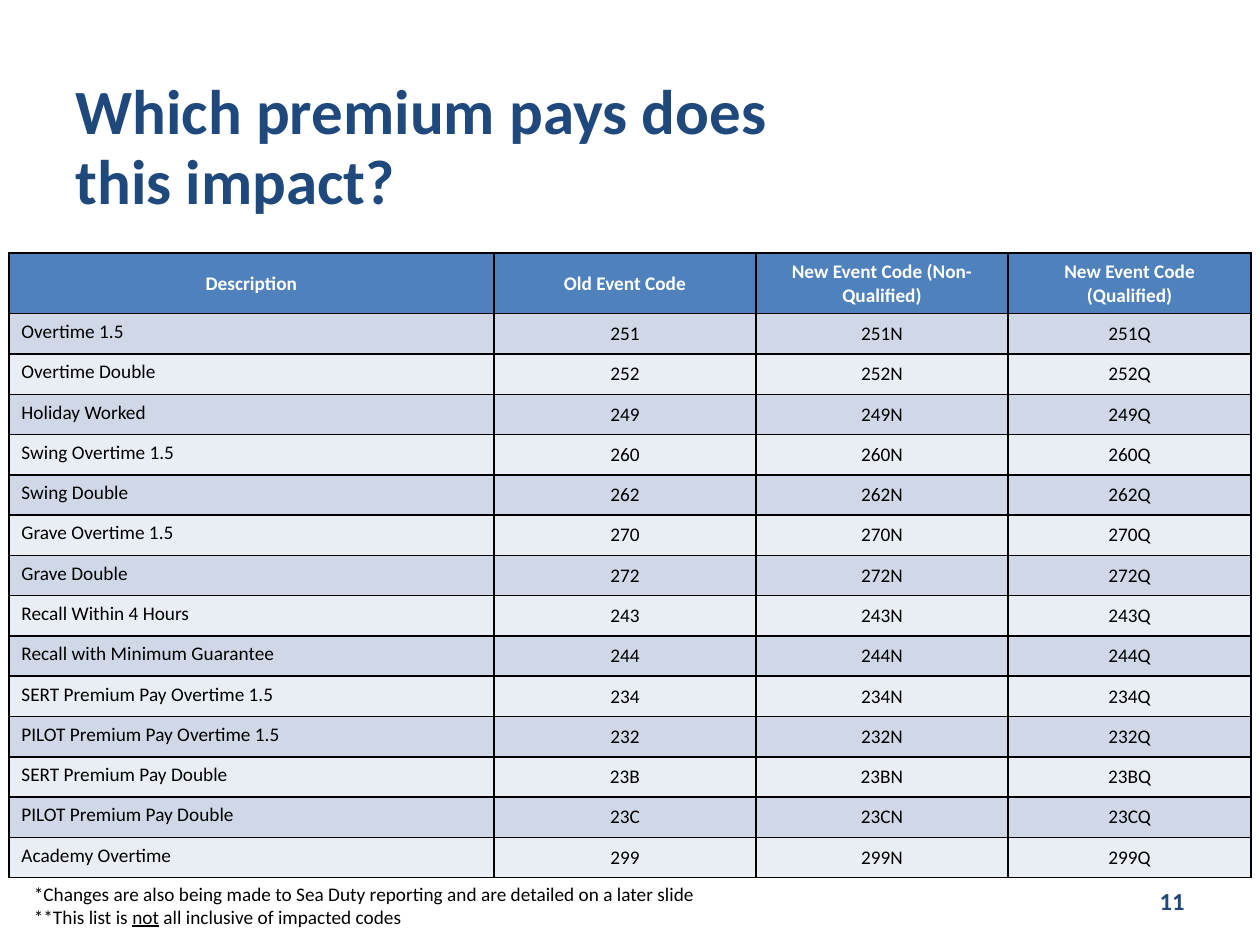
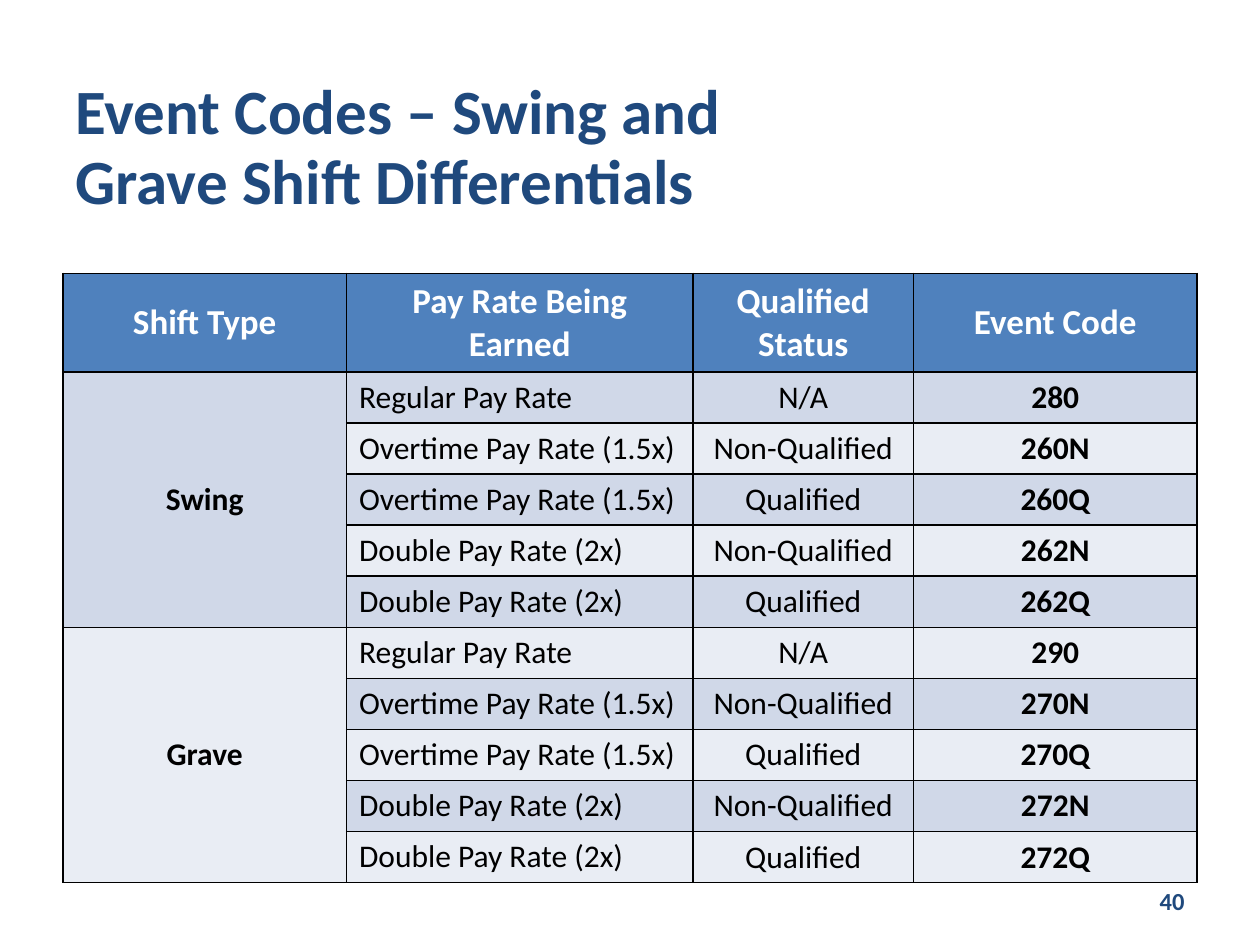
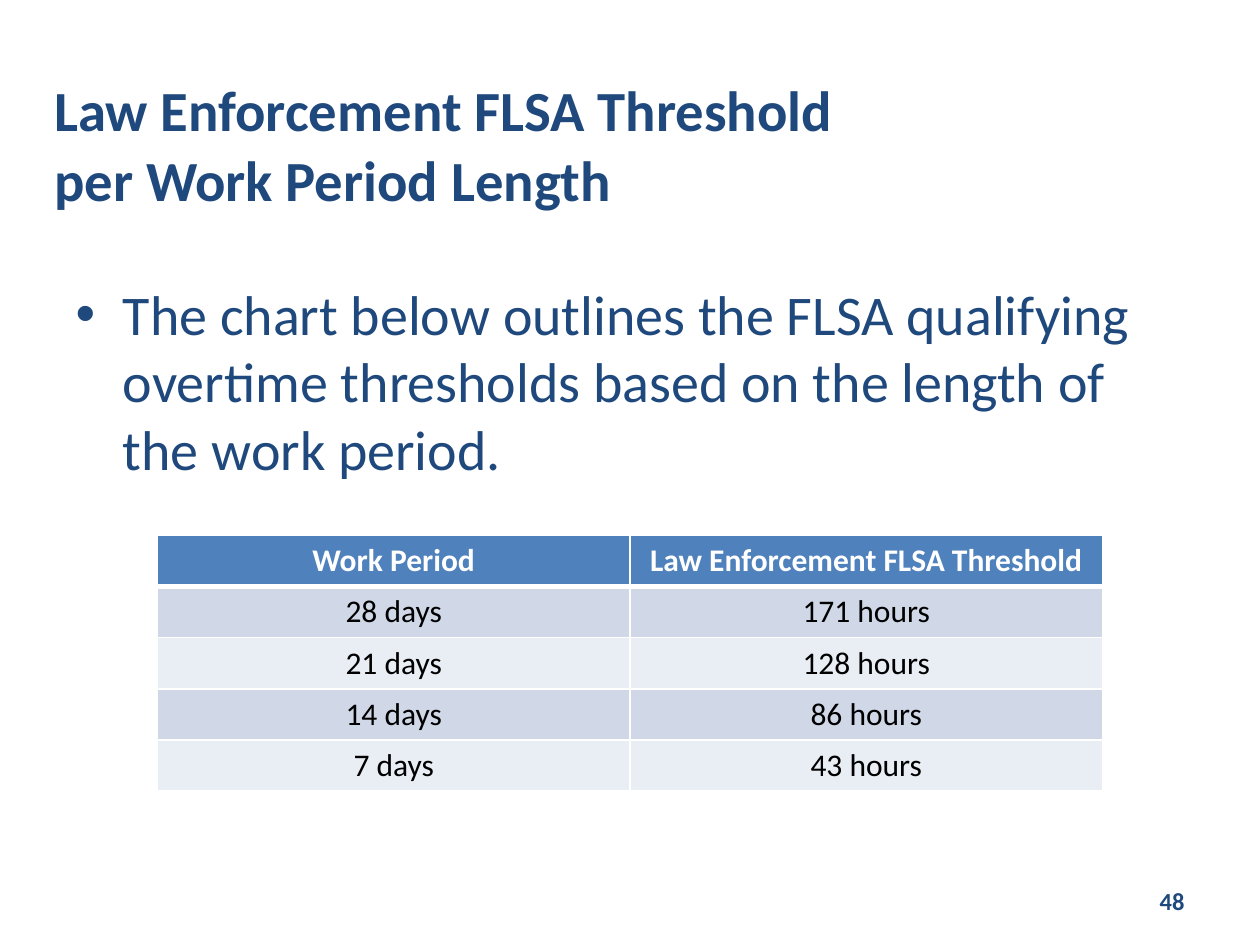
from dataclasses import dataclass

from lxml.etree import SubElement
from pptx import Presentation
from pptx.dml.color import RGBColor
from pptx.enum.text import MSO_ANCHOR, MSO_AUTO_SIZE, PP_ALIGN
from pptx.oxml.ns import qn
from pptx.util import Inches, Pt


@dataclass(frozen=True)
class Theme:
    font: str = "Calibri"
    navy: str = "1F497D"
    header: str = "4F81BD"
    bands: tuple = ("D0D8E8", "E9EDF4")
    black: str = "000000"
    white: str = "FFFFFF"
    title: float = 36
    title_small: float = 32.4
    title_line: float = 40
    body: float = 32
    page: float = 14
    note: float = 11


T = Theme()
TITLE_BOX = (0.5, 0.5, 6.08, 1.33)
PAGE_BOX = (7.17, 6.95, 2.33, 0.4)
ALIGN = {"l": PP_ALIGN.LEFT, "c": PP_ALIGN.CENTER, "r": PP_ALIGN.RIGHT}

# Content
PREMIUM_PAYS = [
    ("Overtime 1.5", "251"),
    ("Overtime Double", "252"),
    ("Holiday Worked", "249"),
    ("Swing Overtime 1.5", "260"),
    ("Swing Double", "262"),
    ("Grave Overtime 1.5", "270"),
    ("Grave Double", "272"),
    ("Recall Within 4 Hours", "243"),
    ("Recall with Minimum Guarantee", "244"),
    ("SERT Premium Pay Overtime 1.5", "234"),
    ("PILOT Premium Pay Overtime 1.5", "232"),
    ("SERT Premium Pay Double", "23B"),
    ("PILOT Premium Pay Double", "23C"),
    ("Academy Overtime", "299"),
]
PAY_RATES = [
    ("Regular Pay Rate", "N/A"),
    ("Overtime Pay Rate (1.5x)", "Non-Qualified"),
    ("Overtime Pay Rate (1.5x)", "Qualified"),
    ("Double Pay Rate (2x)", "Non-Qualified"),
    ("Double Pay Rate (2x)", "Qualified"),
]
SHIFTS = {
    "Swing": ("280", "260N", "260Q", "262N", "262Q"),
    "Grave": ("290", "270N", "270Q", "272N", "272Q"),
}
SLIDES = [
    {
        "title": "Which premium pays does this impact?",
        "page": "11",
        "table": {
            "box": (0.07, 2.01, 9.86, 4.96), "cols": (3.85, 2.08, 2, 1.93),
            "header_height": 0.48, "sizes": (11, 11), "border": T.black,
            "aligns": "lccc",
            "header": ("Description", "Old Event Code",
                       "New Event Code (Non-Qualified)", "New Event Code (Qualified)"),
            "rows": [(name, code, code + "N", code + "Q") for name, code in PREMIUM_PAYS],
        },
        "notes": [
            [("*Changes are also being made to Sea Duty reporting "
              "and are detailed on a later slide", {})],
            [("**This list is ", {}), ("not", {"underline": True}),
             (" all inclusive of impacted codes", {})],
        ],
    },
    {
        "title": "Event Codes – Swing and Grave Shift Differentials",
        "page": "40",
        "table": {
            "box": (0.5, 2.17, 9, 4.83), "cols": (2.25, 2.75, 1.75, 2.25),
            "header_height": 0.78, "sizes": (20, 18), "border": T.black,
            "aligns": "clcc", "bold_cols": (0, 3), "group": len(PAY_RATES),
            "header": ("Shift Type", "Pay Rate Being Earned", "Qualified Status", "Event Code"),
            "rows": [(shift if i == 0 else "", *rate, code)
                     for shift, codes in SHIFTS.items()
                     for i, (rate, code) in enumerate(zip(PAY_RATES, codes))],
        },
    },
    {
        "title": "Law Enforcement FLSA Threshold per Work Period Length",
        "title_box": (0.33, 0.47, 6.42, 1.33),
        "title_size": T.title_small,
        "page": "48",
        "body": "The chart below outlines the FLSA qualifying overtime thresholds "
                "based on the length of the work period.",
        "table": {
            "box": (1.25, 4.25, 7.5, 2.02), "cols": (3.75, 3.75),
            "header_height": 0.4, "sizes": (18, 18), "border": T.white, "header_rule": 3,
            "aligns": "cc",
            "header": ("Work Period", "Law Enforcement FLSA Threshold"),
            "rows": [("28 days", "171 hours"), ("21 days", "128 hours"),
                     ("14 days", "86 hours"), ("7 days", "43 hours")],
        },
    },
]


# Text helpers
def add_run(p, text, size, color, **fmt):
    r = p.add_run()
    r.text = text
    for name, value in {"name": T.font, "size": Pt(size), **fmt}.items():
        setattr(r.font, name, value)
    r.font.color.rgb = RGBColor.from_string(color)


def place(sp, box):
    for name, value in zip(("left", "top", "width", "height"), box):
        setattr(sp, name, Inches(value))


def set_frame(tf, anchor=MSO_ANCHOR.TOP):
    fmt = {"word_wrap": True, "auto_size": MSO_AUTO_SIZE.NONE, "vertical_anchor": anchor}
    for name, value in fmt.items():
        setattr(tf, name, value)


def add_text_box(s, box, anchor=MSO_ANCHOR.TOP):
    tf = s.shapes.add_textbox(*map(Inches, box)).text_frame
    set_frame(tf, anchor)
    return tf


# Slide parts
def fill_title(s, text, box, size):
    place(s.shapes.title, box)
    tf = s.shapes.title.text_frame
    set_frame(tf, MSO_ANCHOR.MIDDLE)
    p = tf.paragraphs[0]
    p.alignment = ALIGN["l"]
    p.line_spacing = Pt(T.title_line)
    add_run(p, text, size, T.navy, bold=True)


def fill_body(s, text):
    sp = s.placeholders[1]
    place(sp, (0.5, 2.17, 9, 2.58))
    set_frame(sp.text_frame)
    p = sp.text_frame.paragraphs[0]
    p.space_before = Pt(0)
    add_run(p, text, T.body, T.navy)


def add_page_number(s, text):
    p = add_text_box(s, PAGE_BOX, MSO_ANCHOR.MIDDLE).paragraphs[0]
    p.alignment = ALIGN["r"]
    add_run(p, text, T.page, T.navy, bold=True)


def add_notes_below(s, paragraphs):
    tf = add_text_box(s, (0.17, 6.95, 9.67, 0.47))
    for i, runs in enumerate(paragraphs):
        p = tf.add_paragraph() if i else tf.paragraphs[0]
        for text, fmt in runs:
            add_run(p, text, T.note, T.black, **fmt)


def set_borders(cell, color, widths):
    tc_pr = cell._tc.get_or_add_tcPr()
    for side, width in widths.items():
        ln = SubElement(tc_pr, qn(f"a:ln{side}"), w=str(Pt(width)))
        SubElement(SubElement(ln, qn("a:solidFill")), qn("a:srgbClr"), val=color)


def add_grid(s, spec):
    rows = [spec["header"], *spec["rows"]]
    height, header_height = spec["box"][3], spec["header_height"]
    row_height = (height - header_height) / len(spec["rows"])
    table = s.shapes.add_table(len(rows), len(spec["cols"]), *map(Inches, spec["box"])).table
    for col, width in zip(table.columns, spec["cols"]):
        col.width = Inches(width)
    for y, values in enumerate(rows):
        table.rows[y].height = Inches(row_height if y else header_height)
        for x, value in enumerate(values):
            cell = table.cell(y, x)
            align = spec["aligns"][x] if y else "c"
            widths = dict.fromkeys("LRTB", 1)
            if y < 2:  # the rule under the header is shared by two rows
                widths["T" if y else "B"] = spec.get("header_rule", 1)
            set_borders(cell, spec["border"], widths)
            cell.fill.solid()
            cell.fill.fore_color.rgb = RGBColor.from_string(
                T.bands[(y - 1) % 2] if y else T.header)
            cell.vertical_anchor = MSO_ANCHOR.TOP if align == "l" else MSO_ANCHOR.MIDDLE
            if value:
                p = cell.text_frame.paragraphs[0]
                p.alignment = ALIGN[align]
                add_run(p, value, spec["sizes"][y > 0], T.black if y else T.white,
                        bold=y == 0 or x in spec.get("bold_cols", ()))
    # Join the first column over each group of rows
    group = spec.get("group")
    if group:
        for y in range(1, len(rows), group):
            table.cell(y, 0).merge(table.cell(y + group - 1, 0))


def main():
    prs = Presentation()
    prs.slide_width, prs.slide_height = Inches(10), Inches(7.5)
    for item in SLIDES:
        s = prs.slides.add_slide(prs.slide_layouts[1 if "body" in item else 5])
        fill_title(s, item["title"], item.get("title_box", TITLE_BOX),
                   item.get("title_size", T.title))
        add_page_number(s, item["page"])
        add_grid(s, item["table"])
        if "body" in item:
            fill_body(s, item["body"])
        if "notes" in item:
            add_notes_below(s, item["notes"])
    prs.save("out.pptx")


if __name__ == "__main__":
    main()
